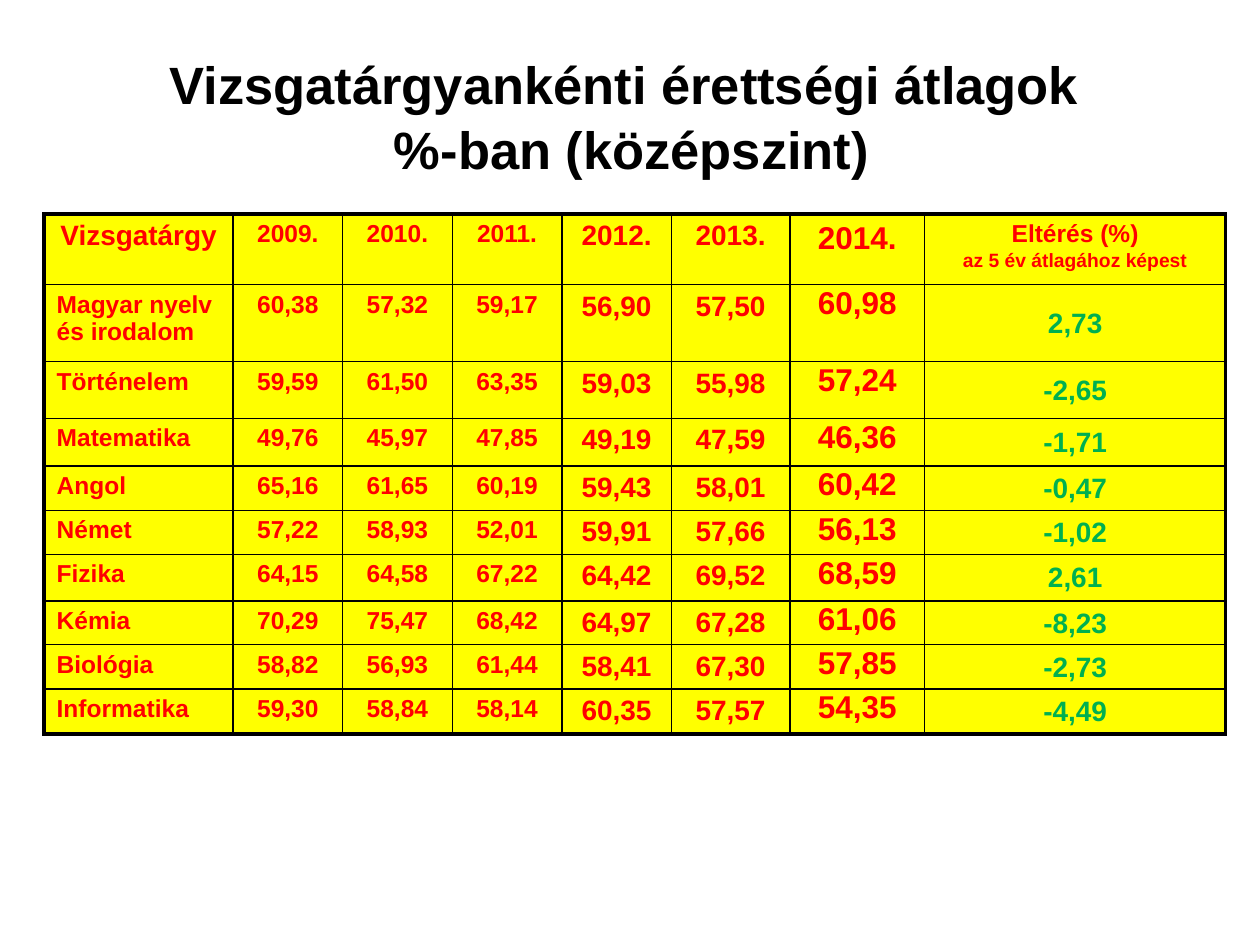
from lxml import etree
from pptx import Presentation
from pptx.dml.color import RGBColor
from pptx.enum import text
from pptx.oxml.ns import qn
from pptx.util import Inches, Pt

BLACK = RGBColor(0, 0, 0)
RED = RGBColor(0xFF, 0, 0)
GREEN = RGBColor(0, 0xB0, 0x50)
YELLOW = RGBColor(0xFF, 0xFF, 0)
FONT = "Arial"

TITLE = "Vizsgatárgyankénti érettségi átlagok\v %-ban (középszint)"
HEADER = ["Vizsgatárgy", "2009.", "2010.", "2011.", "2012.", "2013.", "2014.",
          "Eltérés (%)\naz 5 év átlagához képest"]
RESULTS = [
    ["Magyar nyelv és irodalom", "60,38", "57,32", "59,17", "56,90", "57,50", "60,98", "2,73"],
    ["Történelem", "59,59", "61,50", "63,35", "59,03", "55,98", "57,24", "-2,65"],
    ["Matematika", "49,76", "45,97", "47,85", "49,19", "47,59", "46,36", "-1,71"],
    ["Angol", "65,16", "61,65", "60,19", "59,43", "58,01", "60,42", "-0,47"],
    ["Német", "57,22", "58,93", "52,01", "59,91", "57,66", "56,13", "-1,02"],
    ["Fizika", "64,15", "64,58", "67,22", "64,42", "69,52", "68,59", "2,61"],
    ["Kémia", "70,29", "75,47", "68,42", "64,97", "67,28", "61,06", "-8,23"],
    ["Biológia", "58,82", "56,93", "61,44", "58,41", "67,30", "57,85", "-2,73"],
    ["Informatika", "59,30", "58,84", "58,14", "60,35", "57,57", "54,35", "-4,49"],
]
ROWS = [HEADER] + RESULTS
COLUMN_WIDTHS = [1.5, 0.87, 0.87, 0.87, 0.87, 0.94, 1.07, 2.39]
ROW_HEIGHTS = [0.56, 0.61, 0.45, 0.38, 0.35, 0.35, 0.37, 0.34, 0.35, 0.36]
HEADER_SIZES = [16, 14, 14, 14, 16, 16, 18, 14]
RESULT_SIZES = [14, 14, 14, 14, 16, 16, 18, 16]
SUBHEADING_SIZE = 11
SUBJECT, LATEST, CHANGE = 0, 6, 7


def set_font(paragraph, size, color):
    font = paragraph.font
    font.name, font.size, font.bold = FONT, Pt(size), True
    font.color.rgb = color


def set_borders(cell, row, column):
    """Thick lines around the table, thin lines inside it."""
    on_edge = {"lnL": column == 0, "lnR": column == len(HEADER) - 1,
               "lnT": row == 0, "lnB": row == len(ROWS) - 1}
    properties = cell._tc.get_or_add_tcPr()
    for position, (side, thick) in enumerate(on_edge.items()):
        line = etree.Element(qn("a:" + side), w=str(Pt(2.25 if thick else 1)))
        fill = etree.SubElement(line, qn("a:solidFill"))
        etree.SubElement(fill, qn("a:srgbClr"), val=str(BLACK))
        properties.insert(position, line)


def fill_cell(cell, row, column):
    is_header = row == 0
    cell.text = ROWS[row][column]
    size = (HEADER_SIZES if is_header else RESULT_SIZES)[column]
    color = GREEN if column == CHANGE and not is_header else RED
    left_aligned = column == SUBJECT and not is_header
    for index, paragraph in enumerate(cell.text_frame.paragraphs):
        paragraph.alignment = text.PP_ALIGN.LEFT if left_aligned else text.PP_ALIGN.CENTER
        if index:
            paragraph.space_before = Pt(1)
        set_font(paragraph, SUBHEADING_SIZE if index else size, color)
    if not is_header and column >= LATEST:
        cell.margin_left = cell.margin_right = cell.margin_top = Inches(0.01)
        cell.margin_bottom = 0
        if column == CHANGE:
            cell.vertical_anchor = text.MSO_ANCHOR.MIDDLE
    cell.fill.solid()
    cell.fill.fore_color.rgb = YELLOW
    set_borders(cell, row, column)


def add_title(slide):
    title = slide.shapes.title
    title.left, title.top = Inches(0.27), Inches(0.44)
    title.width, title.height = Inches(9.37), Inches(0.94)
    frame = title.text_frame
    frame.text = TITLE
    frame.auto_size = text.MSO_AUTO_SIZE.NONE
    frame.vertical_anchor = text.MSO_ANCHOR.MIDDLE
    heading = frame.paragraphs[0]
    heading.alignment = text.PP_ALIGN.CENTER
    heading.line_spacing = 1.04
    set_font(heading, 30, BLACK)


def add_results(slide):
    table = slide.shapes.add_table(
        len(ROWS), len(HEADER), Inches(0.35), Inches(1.7),
        Inches(sum(COLUMN_WIDTHS)), Inches(sum(ROW_HEIGHTS))).table
    table.first_row = table.horz_banding = False
    for column, width in zip(table.columns, COLUMN_WIDTHS):
        column.width = Inches(width)
    for row, height in zip(table.rows, ROW_HEIGHTS):
        row.height = Inches(height)
    for row in range(len(ROWS)):
        for column in range(len(HEADER)):
            fill_cell(table.cell(row, column), row, column)


def main():
    presentation = Presentation()
    presentation.slide_width, presentation.slide_height = Inches(10), Inches(7.5)
    slide = presentation.slides.add_slide(presentation.slide_layouts[5])
    add_title(slide)
    add_results(slide)
    presentation.save("out.pptx")


if __name__ == "__main__":
    main()
